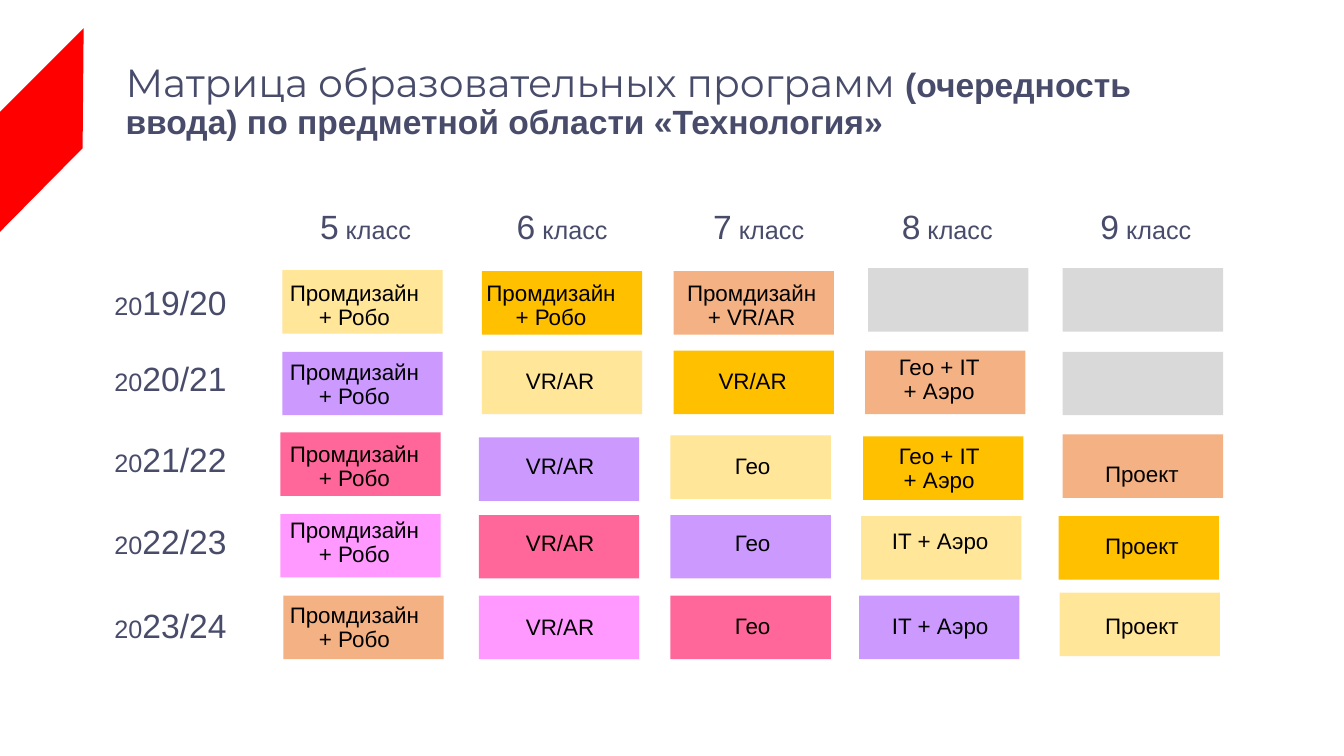
from dataclasses import dataclass

from pptx import Presentation
from pptx.dml.color import RGBColor
from pptx.enum.shapes import MSO_SHAPE
from pptx.enum.text import MSO_ANCHOR, PP_ALIGN
from pptx.shapes.autoshape import Shape
from pptx.slide import Slide
from pptx.util import Inches, Pt


@dataclass(frozen=True)
class Theme:
    ink: str = "484C6A"
    label: str = "000000"
    ribbon: str = "FF0000"
    unused: str = "D9D9D9"
    stages: tuple[str, ...] = (
        "F4B183", "FFC000", "FFE699", "CC99FF", "FF6699", "FF99FF", "F4B183",
    )
    body_font: str = "Arial"
    title_font: str = "Montserrat"
    title_size: int = 28
    large_size: int = 24
    small_size: int = 18
    label_size: int = 16
    line_spacing: float = 0.9


@dataclass(frozen=True)
class Grid:
    left: float = 2.8
    top: float = 2.68
    column_step: float = 1.93
    row_step: float = 0.81
    width: float = 1.59
    height: float = 0.63

    def center(self, column: int, row: int) -> tuple[float, float]:
        return (
            self.left + column * self.column_step + self.width / 2,
            self.top + row * self.row_step + self.height / 2,
        )


@dataclass(frozen=True)
class Span:
    text: str
    size: int
    font: str
    color: str
    bold: bool = False


@dataclass(frozen=True)
class Cell:
    text: str
    box_nudge: tuple[float, float]
    label_nudge: tuple[float, float] = (0, 0)


@dataclass(frozen=True)
class Heading:
    text: str
    nudge: float


THEME = Theme()
GRID = Grid()
DESIGN_ROBO = "Промдизайн\v+ Робо"
GEO_AERO = "Гео + IT\v+ Аэро"

GRADES = (
    Heading("5", 0.03), Heading("6", 0.05), Heading("7", 0.07),
    Heading("8", 0.01), Heading("9", 0.05),
)
YEARS = (
    Heading("19/20", 0.04), Heading("20/21", -0.01), Heading("21/22", -0.02),
    Heading("22/23", -0.02), Heading("23/24", 0.01),
)
PROGRAMS = (
    (
        Cell(DESIGN_ROBO, (0, 0), (-0.08, 0.04)),
        Cell(DESIGN_ROBO, (0.05, 0.01), (-0.06, 0.04)),
        Cell("Промдизайн\v+ VR/AR", (0.02, 0.01), (0, 0.04)),
        Cell("", (0.02, -0.02)),
        Cell("", (0.02, -0.02)),
    ),
    (
        Cell(DESIGN_ROBO, (0, 0), (-0.08, 0.02)),
        Cell("VR/AR", (0.05, -0.01), (0.03, -0.01)),
        Cell("VR/AR", (0.02, -0.01), (0.01, -0.01)),
        Cell(GEO_AERO, (-0.01, -0.01), (-0.07, -0.03)),
        Cell("", (0.02, 0)),
    ),
    (
        Cell(DESIGN_ROBO, (-0.02, -0.01), (-0.08, 0.02)),
        Cell("VR/AR", (0.02, 0.04), (0.03, 0.02)),
        Cell("Гео", (-0.01, 0.02), (0.01, 0.02)),
        Cell(GEO_AERO, (-0.03, 0.03), (-0.07, 0.04)),
        Cell("Проект", (0.02, 0.01), (0.01, 0.1)),
    ),
    (
        Cell(DESIGN_ROBO, (-0.02, -0.01), (-0.08, -0.04)),
        Cell("VR/AR", (0.02, 0), (0.03, -0.03)),
        Cell("Гео", (-0.01, 0), (0.01, -0.03)),
        Cell("IT + Аэро", (-0.05, 0.01), (-0.06, -0.05)),
        Cell("Проект", (-0.02, 0.01), (0.01, 0)),
    ),
    (
        Cell(DESIGN_ROBO, (0.01, -0.01), (-0.08, 0)),
        Cell("VR/AR", (0.02, -0.01), (0.03, 0)),
        Cell("Гео", (-0.01, -0.01), (0.01, -0.01)),
        Cell("IT + Аэро", (-0.07, -0.01), (-0.06, -0.01)),
        Cell("Проект", (-0.01, -0.04), (0.01, -0.01)),
    ),
)


def paint(shape: Shape, color: str) -> None:
    shape.shadow.inherit = False
    shape.fill.solid()
    shape.fill.fore_color.rgb = RGBColor.from_string(color)
    shape.line.fill.background()


def add_text(
    page: Slide, center: tuple[float, float], size: tuple[float, float],
    spans: tuple[Span, ...], align: PP_ALIGN, anchor: MSO_ANCHOR, inset: float = 0.02,
) -> None:
    width, height = size
    box = page.shapes.add_textbox(
        Inches(center[0] - width / 2), Inches(center[1] - height / 2),
        Inches(width), Inches(height),
    )
    frame = box.text_frame
    frame.word_wrap = True
    frame.vertical_anchor = anchor
    frame.margin_left = frame.margin_right = Inches(inset)
    frame.margin_top = frame.margin_bottom = Inches(inset)
    para = frame.paragraphs[0]
    para.alignment = align
    para.line_spacing = THEME.line_spacing
    for span in spans:
        start = len(para.runs)
        if start == 0:
            para.text = span.text
        else:
            para.add_run().text = span.text
        for run in para.runs[start:]:
            run.font.size = Pt(span.size)
            run.font.name = span.font
            run.font.bold = span.bold
            run.font.color.rgb = RGBColor.from_string(span.color)


def body_span(text: str, size: int, color: str = THEME.ink) -> Span:
    return Span(text, size, THEME.body_font, color)


def add_ribbon(page: Slide) -> None:
    builder = page.shapes.build_freeform(0, Inches(2.3), scale=1.0)
    corners = ((0, 1.11), (0.83, 0.28), (0.82, 1.47))
    builder.add_line_segments([(Inches(x), Inches(y)) for x, y in corners], close=True)
    paint(builder.convert_to_shape(), THEME.ribbon)


def add_cell(page: Slide, cell: Cell, column: int, row: int) -> None:
    x, y = GRID.center(column, row)
    box = page.shapes.add_shape(
        MSO_SHAPE.RECTANGLE,
        Inches(x + cell.box_nudge[0] - GRID.width / 2),
        Inches(y + cell.box_nudge[1] - GRID.height / 2),
        Inches(GRID.width), Inches(GRID.height),
    )
    paint(box, THEME.stages[row - column + 2] if cell.text else THEME.unused)
    if cell.text:
        height = 0.52 if "\v" in cell.text else 0.29
        add_text(
            page, (x + cell.label_nudge[0], y + cell.label_nudge[1]), (GRID.width, height),
            (body_span(cell.text, THEME.label_size, THEME.label),),
            PP_ALIGN.CENTER, MSO_ANCHOR.MIDDLE,
        )


def main() -> None:
    deck = Presentation()
    deck.slide_width, deck.slide_height = Inches(13.33), Inches(7.5)
    page = deck.slides.add_slide(deck.slide_layouts[6])
    add_ribbon(page)
    title = (
        Span("Матрица образовательных программ ", THEME.title_size, THEME.title_font, THEME.ink),
        Span("(очередность ввода) по предметной области «Технология»",
             THEME.large_size, THEME.body_font, THEME.ink, True),
    )
    add_text(page, (6.65, 1.02), (10.91, 1), title, PP_ALIGN.LEFT, MSO_ANCHOR.MIDDLE, 0.05)
    for column, grade in enumerate(GRADES):
        spans = (body_span(grade.text, THEME.large_size), body_span(" класс", THEME.small_size))
        x = GRID.center(column, 0)[0] + grade.nudge
        add_text(page, (x, 2.28), (1.39, 0.43), spans, PP_ALIGN.CENTER, MSO_ANCHOR.TOP)
    for row, year in enumerate(YEARS):
        spans = (body_span("20", THEME.small_size), body_span(year.text, THEME.large_size))
        y = GRID.center(0, row)[1] + year.nudge
        add_text(page, (1.81, y), (1.39, 0.43), spans, PP_ALIGN.LEFT, MSO_ANCHOR.TOP)
    for row, cells in enumerate(PROGRAMS):
        for column, cell in enumerate(cells):
            add_cell(page, cell, column, row)
    deck.save("out.pptx")


if __name__ == "__main__":
    main()
